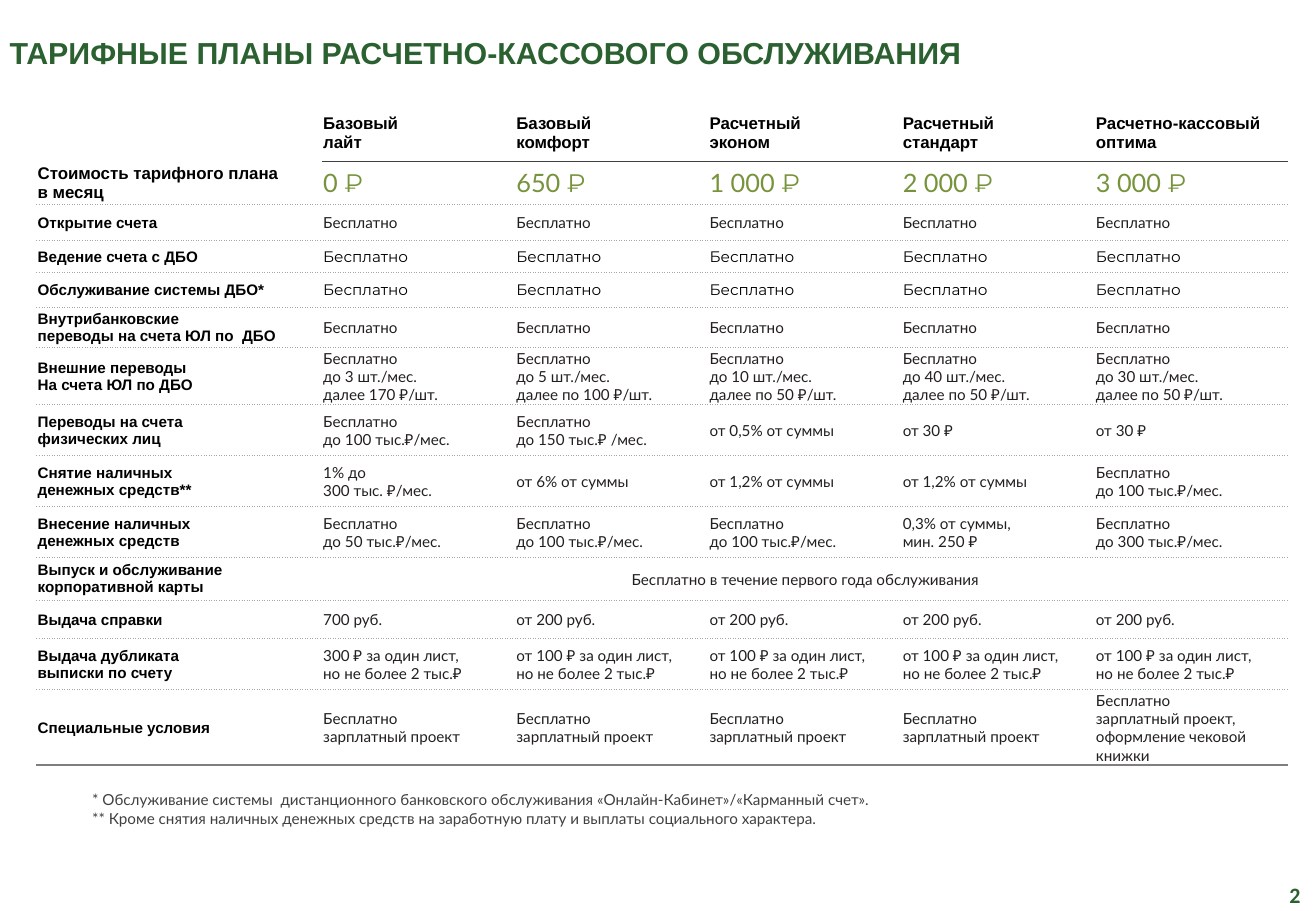
import lxml.etree
import pptx
import pptx.dml.color
import pptx.enum.text
import pptx.oxml.ns
import pptx.util

PX = pptx.util.Inches(1) // 100
ALIGN = pptx.enum.text.PP_ALIGN
ANCHOR = pptx.enum.text.MSO_ANCHOR
GREEN = "2B6030"
HAIRLINE = ("A6A6A6", 0.25, "sysDot")
HEADER_RULE = ("404040", 0.25, "solid")
BOTTOM_RULE = ("7F7F7F", 1, "solid")

COLUMN_WIDTHS = [235] + [159] * 5
PLANS = ["", "Базовый\nлайт", "Базовый\nкомфорт", "Расчетный\nэконом",
         "Расчетный\nстандарт", "Расчетно-кассовый\nоптима"]
FREE = ["Бесплатно"] * 5
LABEL = {"font": "Arial", "size": 9, "color": "000000", "bold": True}
HEADING = {**LABEL, "size": 10}
VALUE = {"font": "Lato", "size": 9, "color": "231F20"}
WIDE_VALUE = {**VALUE, "font": "Montserrat", "color": "000000"}
PRICE = {"font": "Lato", "size": 15, "color": "77933C", "ruble_font": "Montserrat"}

TARIFF_ROWS = [
    (40, PLANS[0], PLANS[1:], HEADING, HEADING),
    (35, "Стоимость тарифного плана\nв месяц",
     [f"{price} ₽" for price in ("0", "650", "1 000", "2 000", "3 000")], HEADING, PRICE),
    (30, "Открытие счета", FREE, LABEL, VALUE),
    (26, "Ведение счета с ДБО", FREE, LABEL, WIDE_VALUE),
    (29, "Обслуживание системы ДБО*", FREE, LABEL, WIDE_VALUE),
    (33, "Внутрибанковские\nпереводы на счета ЮЛ по  ДБО", FREE, LABEL, VALUE),
    (47, "Внешние переводы\nНа счета ЮЛ по ДБО",
     [f"Бесплатно\nдо {count} шт./мес.\nдалее {fee} ₽/шт." for count, fee in
      ((3, "170"), (5, "по 100"), (10, "по 50"), (40, "по 50"), (30, "по 50"))],
     LABEL, VALUE),
    (42, "Переводы на счета\nфизических лиц",
     ["Бесплатно\nдо 100 тыс.₽/мес.", "Бесплатно\nдо 150 тыс.₽ /мес.",
      "от 0,5% от суммы", "от 30 ₽", "от 30 ₽"], LABEL, VALUE),
    (42, "Снятие наличных\nденежных средств**",
     ["1% до\n300 тыс. ₽/мес.", "от 6% от суммы", "от 1,2% от суммы",
      "от 1,2% от суммы", "Бесплатно\nдо 100 тыс.₽/мес."], LABEL, VALUE),
    (42, "Внесение наличных\nденежных средств",
     ["Бесплатно\nдо 50 тыс.₽/мес.", "Бесплатно\nдо 100 тыс.₽/мес.",
      "Бесплатно\nдо 100 тыс.₽/мес.", "0,3% от суммы,\nмин. 250 ₽",
      "Бесплатно\nдо 300 тыс.₽/мес."], LABEL, VALUE),
    (35, "Выпуск и обслуживание корпоративной карты",
     ["Бесплатно в течение первого года обслуживания"], LABEL,
     {**VALUE, "align": ALIGN.CENTER}),
    (32, "Выдача справки", ["700 руб."] + ["от 200 руб."] * 4, LABEL, VALUE),
    (42, "Выдача дубликата\nвыписки по счету",
     [f"{fee} ₽ за один лист,\nно не более 2 тыс.₽" for fee in ["300"] + ["от 100"] * 4],
     LABEL, VALUE),
    (62, "Специальные условия",
     ["Бесплатно\nзарплатный проект"] * 4
     + ["Бесплатно\nзарплатный проект,\nоформление чековой книжки"], LABEL, VALUE),
]
FOOTNOTES = (
    "* Обслуживание системы  дистанционного банковского обслуживания "
    "«Онлайн-Кабинет»/«Карманный счет».\n"
    "** Кроме снятия наличных денежных средств на заработную плату "
    "и выплаты социального характера.")


def rgb(value):
    """Turn a hex string into a colour."""
    return pptx.dml.color.RGBColor.from_string(value)


def write_text(frame, text, font, size, color, bold=False, align=ALIGN.LEFT, ruble_font=None):
    """Fill a text frame, one paragraph a line, with an optional font for a final ruble sign."""
    for index, line in enumerate(text.split("\n")):
        paragraph = frame.paragraphs[0] if index == 0 else frame.add_paragraph()
        paragraph.alignment = align
        pieces = [(line[:-1], font), (line[-1:], ruble_font)] if ruble_font else [(line, font)]
        for piece, name in pieces:
            run = paragraph.add_run()
            run.text = piece
            run.font.name = name
            run.font.size = pptx.util.Pt(size)
            run.font.bold = bold
            run.font.color.rgb = rgb(color)


def set_borders(cell, top, bottom):
    """Draw the top and bottom borders of a cell and clear its sides."""
    properties = cell._tc.get_or_add_tcPr()
    qn = pptx.oxml.ns.qn
    sides = [("a:lnL", None), ("a:lnR", None), ("a:lnT", top), ("a:lnB", bottom)]
    for index, (tag, border) in enumerate(sides):
        line = lxml.etree.Element(qn(tag))
        properties.insert(index, line)
        if border is None:
            lxml.etree.SubElement(line, qn("a:noFill"))
            continue
        color, width, dash = border
        line.set("w", str(pptx.util.Pt(width)))
        fill = lxml.etree.SubElement(line, qn("a:solidFill"))
        lxml.etree.SubElement(fill, qn("a:srgbClr"), val=color)
        lxml.etree.SubElement(line, qn("a:prstDash"), val=dash)


def border_below(row, column):
    """Choose the rule under a cell; row -1 is the top edge of the table."""
    if row == -1 or (row == 0 and column == 0):
        return None
    if row == 0:
        return HEADER_RULE
    return BOTTOM_RULE if row == len(TARIFF_ROWS) - 1 else HAIRLINE


def add_title(slide, text, left, top, width, height):
    """Place and format the title placeholder."""
    title = slide.shapes.title
    title.left, title.top, title.width, title.height = (
        side * PX for side in (left, top, width, height))
    title.text_frame.vertical_anchor = ANCHOR.MIDDLE
    write_text(title.text_frame, text, "Arial", 18, GREEN, bold=True)


def add_tariff_table(slide, left, top):
    """Build the table of tariff plans from its top left corner."""
    heights = [row[0] for row in TARIFF_ROWS]
    table = slide.shapes.add_table(
        len(heights), len(COLUMN_WIDTHS), left * PX, top * PX,
        sum(COLUMN_WIDTHS) * PX, sum(heights) * PX).table
    for column, width in zip(table.columns, COLUMN_WIDTHS):
        column.width = width * PX
    for row, (height, label, values, label_format, value_format) in enumerate(TARIFF_ROWS):
        table.rows[row].height = height * PX
        for column in range(len(COLUMN_WIDTHS)):
            cell = table.cell(row, column)
            cell.margin_left = cell.margin_right = cell.margin_top = PX
            cell.margin_bottom = 0
            cell.vertical_anchor = ANCHOR.MIDDLE if row else ANCHOR.TOP
            if row and column == 0:
                cell.fill.solid()
                cell.fill.fore_color.rgb = rgb("FFFFFF")
            else:
                cell.fill.background()
            set_borders(cell, border_below(row - 1, column), border_below(row, column))
        if len(values) == 1:
            table.cell(row, 1).merge(table.cell(row, len(COLUMN_WIDTHS) - 1))
        if label:
            write_text(table.cell(row, 0).text_frame, label, **label_format)
        for column, value in enumerate(values, start=1):
            write_text(table.cell(row, column).text_frame, value, **value_format)


def add_text(slide, text, left, top, width, height, inset=True, **text_format):
    """Add a wrapped text box, with or without its insets."""
    box = slide.shapes.add_textbox(left * PX, top * PX, width * PX, height * PX)
    frame = box.text_frame
    frame.word_wrap = True
    if not inset:
        frame.margin_left = frame.margin_right = frame.margin_top = frame.margin_bottom = 0
        frame.vertical_anchor = ANCHOR.MIDDLE
    write_text(frame, text, **text_format)


def main():
    """Build and save the tariff slide."""
    presentation = pptx.Presentation()
    presentation.slide_width = 1083 * PX
    presentation.slide_height = 750 * PX
    slide = presentation.slides.add_slide(presentation.slide_layouts[5])
    add_title(slide, "ТАРИФНЫЕ ПЛАНЫ РАСЧЕТНО-КАССОВОГО ОБСЛУЖИВАНИЯ", -2, 19, 910, 49)
    add_tariff_table(slide, 30, 93)
    add_text(slide, FOOTNOTES, 66, 646, 943, 40,
             font="Lato", size=9, color="404040", align=ALIGN.JUSTIFY)
    add_text(slide, "2", 1061, 726, 22, 22, inset=False,
             font="Calibri", size=13, color=GREEN, bold=True)
    presentation.save("out.pptx")


if __name__ == "__main__":
    main()
